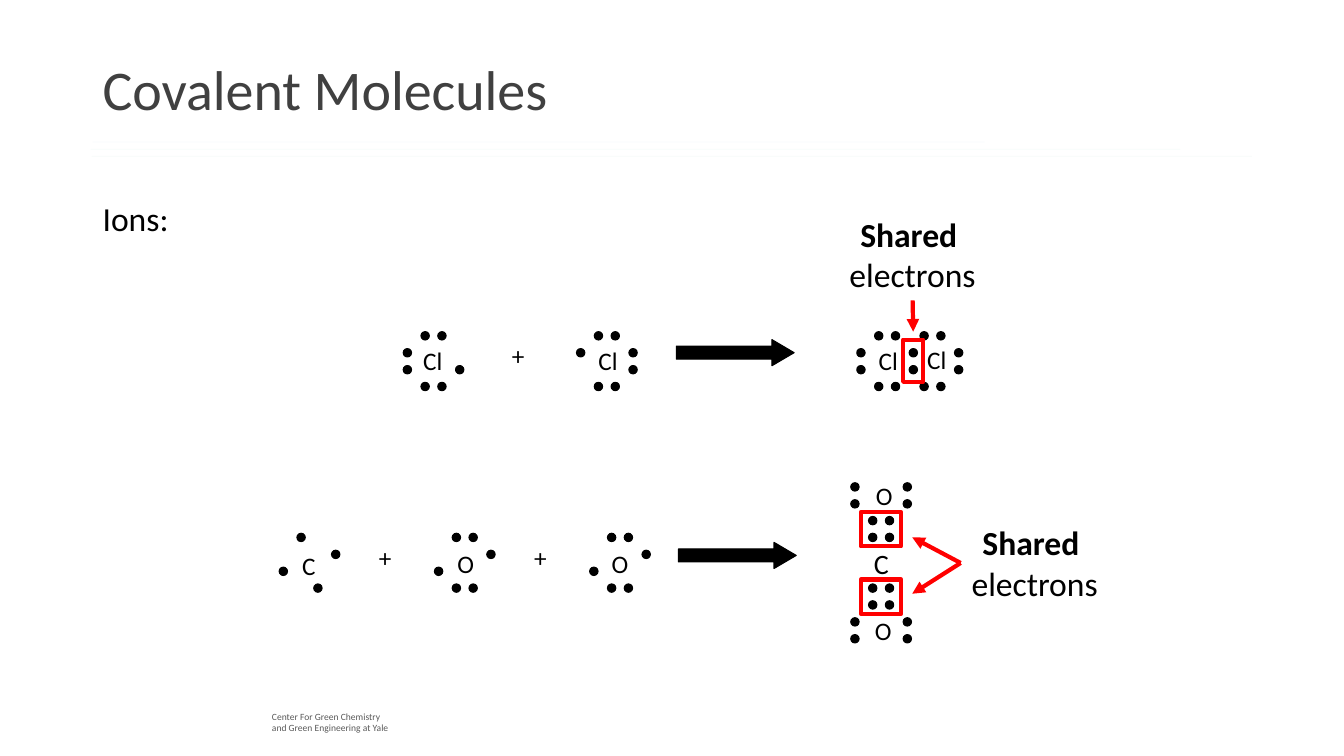
"""Build a slide on covalent molecules with electron dot diagrams."""
from lxml import etree
from pptx import Presentation
from pptx.dml.color import RGBColor
from pptx.enum.shapes import MSO_CONNECTOR as Connector, MSO_SHAPE as Shape
from pptx.enum.text import MSO_ANCHOR as Anchor, PP_ALIGN as Align
from pptx.oxml.ns import qn
from pptx.util import Pt

BLACK = RGBColor(0x00, 0x00, 0x00)
RED = RGBColor(0xFF, 0x00, 0x00)
TITLE_GREY = RGBColor(0x40, 0x40, 0x40)
FOOTER_GREY = RGBColor(0x59, 0x59, 0x59)
FONT = "Calibri"

TITLE = "Covalent Molecules"
BODY = "Ions:"
FOOTER = ["Center For Green Chemistry", "and Green Engineering at Yale"]
SHARED = ["Shared ", "electrons"]

TITLE_RULES = [
    (66.2, 703.4, 101.5, RGBColor(0x4E, 0xB3, 0xCF)),
    (64.8, 843.1, 106.6, RGBColor(0x44, 0xC1, 0xA3)),
    (65.5, 894.2, 111.6, RGBColor(0x37, 0xA7, 0x6F)),
]
RULE_OPACITY = 4

DOT = 6
COLUMNS = (0, 12.7, 24.7, 37.4)
ROWS = (0, 12.1, 24.2, 36.2)
DOT_PLACES = {
    "top left": (1, 0), "top right": (2, 0),
    "right upper": (3, 1), "right lower": (3, 2),
    "bottom left": (1, 3), "bottom right": (2, 3),
    "left upper": (0, 1), "left lower": (0, 2),
}
TOP = ("top left", "top right")
BOTTOM = ("bottom left", "bottom right")
LEFT = ("left upper", "left lower")
RIGHT = ("right upper", "right lower")
OXYGEN = TOP + BOTTOM + ("right upper", "left lower")

CHLORINE_Y, CARBON_Y, ATOM_STEP = 236.9, 380.9, 48.2
ATOMS = [
    ("Cl", 288, CHLORINE_Y, (7.2, 6.5), 18, TOP + BOTTOM + LEFT + ("right lower",)),
    ("Cl", 411.8, CHLORINE_Y, (8.6, 6.5), 18, TOP + BOTTOM + RIGHT + ("left upper",)),
    ("Cl", 612, CHLORINE_Y, (8.6, 6.5), 18, TOP + BOTTOM + LEFT + RIGHT),
    ("Cl", 644.4, CHLORINE_Y, (10.8, 5.8), 18, TOP + BOTTOM + RIGHT),
    ("C", 199.4, CARBON_Y, (9.4, 8.6), 18,
     ("top left", "right upper", "bottom right", "left lower")),
    ("O", 310.3, CARBON_Y, (9.4, 7.2), 18, OXYGEN),
    ("O", 421.2, CARBON_Y, (8.6, 7.2), 18, OXYGEN),
    ("O", 607.7, CARBON_Y - ATOM_STEP, (10.8, 7), 18, LEFT + RIGHT + BOTTOM),
    ("C", 607.7, CARBON_Y, (9.4, 5.8), 20, TOP + BOTTOM),
    ("O", 607.7, CARBON_Y + ATOM_STEP, (10.1, 7.2), 18, LEFT + RIGHT + TOP),
]
LABEL_WIDTHS = {"Cl": 28.1, "C": 24.5, "O": 26.6}
PLUSES = [(358.6, 239.8), (263.5, 383.8), (374.4, 383.8)]
REACTION_ARROWS = [(483.1, 242.6), (484.6, 387.4)]
SHARED_FRAMES = [
    (645.1, 242.6, 14.4, 30.2),
    (614.9, 365.8, 28.8, 24.5),
    (614.9, 414, 28.8, 24.5),
]
SHARED_LABELS = [
    ((599, 149), 2, [(652.3, 236.9)]),
    ((686.2, 369.4), 1, [(651.6, 383.8), (651.6, 424.1)]),
]


def add_text(slide, lines, box, size, color=BLACK, wrap=False):
    shape = slide.shapes.add_textbox(*map(Pt, box))
    frame = shape.text_frame
    frame.word_wrap = wrap
    for index, line in enumerate(lines):
        paragraph = frame.paragraphs[0] if index == 0 else frame.add_paragraph()
        paragraph.text = line
        paragraph.font.name = FONT
        paragraph.font.size = Pt(size)
        paragraph.font.color.rgb = color
    return shape


def add_solid(slide, kind, box):
    shape = slide.shapes.add_shape(kind, *map(Pt, box))
    shape.shadow.inherit = False
    shape.fill.solid()
    shape.fill.fore_color.rgb = BLACK
    shape.line.color.rgb = BLACK
    shape.line.width = Pt(0.75)
    return shape


def add_line(slide, start, end, color, width):
    line = slide.shapes.add_connector(Connector.STRAIGHT, *map(Pt, start + end))
    line.line.color.rgb = color
    line.line.width = Pt(width)
    etree.SubElement(line._element.spPr, qn("a:effectLst"))
    return line


def add_header(slide):
    add_text(slide, FOOTER, (187.2, 504, 133.9, 23.8), 6.8, FOOTER_GREY, wrap=True)
    for left, right, y, color in TITLE_RULES:
        rule = add_line(slide, (left, y), (right, y), color, 0.5)
        fill = rule.line._ln.find(f".//{qn('a:srgbClr')}")
        etree.SubElement(fill, qn("a:alpha"), val=str(RULE_OPACITY * 1000))
    title = add_text(slide, [TITLE], (66.2, 13.7, 828, 104.4), 40, TITLE_GREY, wrap=True)
    title.text_frame.vertical_anchor = Anchor.MIDDLE
    body = add_text(slide, [BODY], (66.2, 141.1, 620.6, 54.7), 24, wrap=True)
    for shape in (title, body):
        shape.text_frame.paragraphs[0].line_spacing = 0.9


def add_atom(slide, symbol, left, top, label_offset, size, electrons):
    for place in electrons:
        column, row = DOT_PLACES[place]
        add_solid(slide, Shape.OVAL, (left + COLUMNS[column], top + ROWS[row], DOT, DOT))
    across, down = label_offset
    box = (left + across, top + down, LABEL_WIDTHS[symbol], 28.8)
    add_text(slide, [symbol], box, size)


def add_shared_label(slide, position, side, targets):
    label = add_text(slide, SHARED, position + (105.8, 65.5), 24)
    for paragraph in label.text_frame.paragraphs:
        paragraph.alignment = Align.CENTER
    label.text_frame.paragraphs[0].font.bold = True
    for target in targets:
        arrow = add_line(slide, position, target, RED, 3)
        arrow.begin_connect(label, side)
        etree.SubElement(arrow.line._ln, qn("a:tailEnd"), type="triangle")


def main():
    presentation = Presentation()
    presentation.slide_width, presentation.slide_height = Pt(960), Pt(540)
    slide = presentation.slides.add_slide(presentation.slide_layouts[6])
    add_header(slide)
    for atom in ATOMS:
        add_atom(slide, *atom)
    for position in PLUSES:
        add_text(slide, ["+"], position + (23.8, 28.8), 18)
    for position in REACTION_ARROWS:
        arrow = add_solid(slide, Shape.RIGHT_ARROW, position + (84.2, 18.7))
        arrow.adjustments[1] = 0.85
    for box in SHARED_FRAMES:
        frame = slide.shapes.add_shape(Shape.RECTANGLE, *map(Pt, box))
        frame.shadow.inherit = False
        frame.fill.background()
        frame.line.color.rgb = RED
        frame.line.width = Pt(3)
    for label in SHARED_LABELS:
        add_shared_label(slide, *label)
    presentation.save("out.pptx")


if __name__ == "__main__":
    main()
